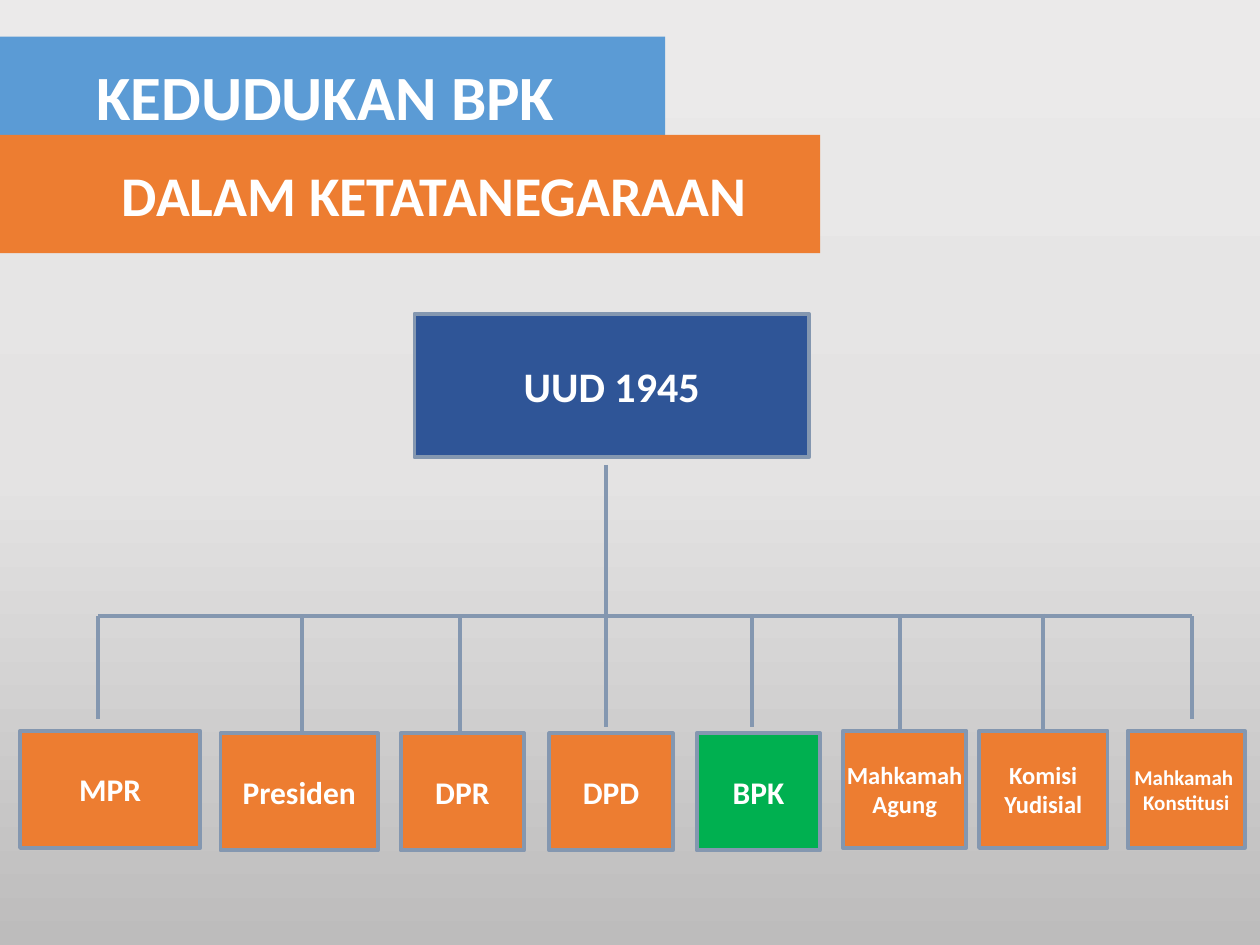
from copy import deepcopy
from dataclasses import dataclass

from lxml import etree
from pptx import Presentation
from pptx import util as u
from pptx.dml.color import RGBColor
from pptx.enum import shapes, text
from pptx.oxml.ns import qn

COLS, ROWS = 100, 75
HUES = {
    "navy": "2F5597", "orange": "ED7D31", "green": "00B050",
    "blue": "5B9BD5", "line": "8497B0", "white": "FFFFFF",
    "top": "EBEAEA", "mid": "E4E3E3", "low": "BDBCBC",
}
BAR = 48.9

deck = Presentation()
deck.slide_width, deck.slide_height = u.Inches(10), u.Inches(7.5)
slide = deck.slides.add_slide(deck.slide_layouts[5])


@dataclass
class Box:
    words: str
    left: float
    top: float
    wide: float
    high: float = 9.3
    size: int = 18
    hue: str = "orange"


@dataclass
class Stem:
    col: float
    end: float
    start: float = BAR


def tint(name: str) -> RGBColor:
    return RGBColor.from_string(HUES[name])


def col(n: float) -> int:
    return round(deck.slide_width * n / COLS)


def row(n: float) -> int:
    return round(deck.slide_height * n / ROWS)


def write(shape, words: str, size: int, align=text.PP_ALIGN.CENTER,
          wrap: bool = True, indent: float = 0) -> None:
    frame = shape.text_frame
    frame.text = words
    frame.word_wrap = wrap
    frame.auto_size = text.MSO_AUTO_SIZE.NONE
    frame.vertical_anchor = text.MSO_ANCHOR.MIDDLE
    for para in frame.paragraphs:
        para.alignment = align
        if indent:
            para._p.get_or_add_pPr().set("marL", str(col(indent)))
        font = para.runs[0].font
        font.name, font.size, font.bold = "Calibri", u.Pt(size), True
        font.color.rgb = tint("white")


def paint(shape, hue: str) -> None:
    shape.fill.solid()
    shape.fill.fore_color.rgb = tint(hue)


def edge(line) -> None:
    line.color.rgb = tint("line")
    line.width = u.Pt(2.25)


def rect(left: float, top: float, wide: float, high: float, hue: str):
    shape = slide.shapes.add_shape(
        shapes.MSO_SHAPE.RECTANGLE, col(left), row(top), col(wide), row(high))
    shape.shadow.inherit = False
    paint(shape, hue)
    return shape


def draw(box: Box) -> None:
    shape = rect(box.left, box.top, box.wide, box.high, box.hue)
    edge(shape.line)
    write(shape, box.words, box.size, wrap=False)


def link(x1: float, y1: float, x2: float, y2: float) -> None:
    wire = slide.shapes.add_connector(
        shapes.MSO_CONNECTOR.STRAIGHT, col(x1), row(y1), col(x2), row(y2))
    edge(wire.line)
    etree.SubElement(wire._element.spPr, qn("a:effectLst"))


def shade() -> None:
    fill = slide.background.fill
    fill.gradient()
    fill.gradient_angle = 270
    stops = slide._element.find(".//" + qn("a:gsLst"))
    stops.insert(1, deepcopy(stops[0]))
    for stop, hue, place in zip(fill.gradient_stops, ("top", "mid", "low"), (0, 0.5, 1)):
        stop.color.rgb = tint(hue)
        stop.position = place


def head() -> None:
    title = slide.shapes.title
    title.left, title.top = col(0), row(2.9)
    title.width, title.height = col(52.8), row(9.4)
    paint(title, "blue")
    write(title, "KEDUDUKAN BPK ", 36)
    band = rect(-0.3, 10.7, 65.4, 9.4, "orange")
    band.line.fill.background()
    write(band, "DALAM KETATANEGARAAN", 32, align=text.PP_ALIGN.LEFT, indent=9)


HIGH, LOW = 58, 58.2
BOXES = [
    Box("UUD 1945", 32.9, 24.9, 31.3, high=11.4, size=24, hue="navy"),
    Box("MPR", 1.6, HIGH, 14.3),
    Box("Presiden", 17.5, LOW, 12.5),
    Box("DPR", 31.8, LOW, 9.8),
    Box("DPD", 43.6, LOW, 9.8),
    Box("BPK", 55.3, LOW, 9.8, hue="green"),
    Box("Mahkamah\nAgung", 66.9, HIGH, 9.8, size=14),
    Box("Komisi\nYudisial", 77.7, HIGH, 10.2, size=14),
    Box("Mahkamah \nKonstitusi", 89.5, HIGH, 9.3, size=12),
]
STEMS = [
    Stem(7.8, 57.1), Stem(23.95, LOW), Stem(36.5, LOW),
    Stem(48.1, 57.7, start=36.9), Stem(59.7, 57.7), Stem(71.4, LOW),
    Stem(82.8, HIGH, start=48.7), Stem(94.6, 57.1),
]

shade()
head()
link(STEMS[0].col, BAR, STEMS[-1].col, BAR)
for stem in STEMS:
    link(stem.col, stem.start, stem.col, stem.end)
for box in BOXES:
    draw(box)
deck.save("out.pptx")
